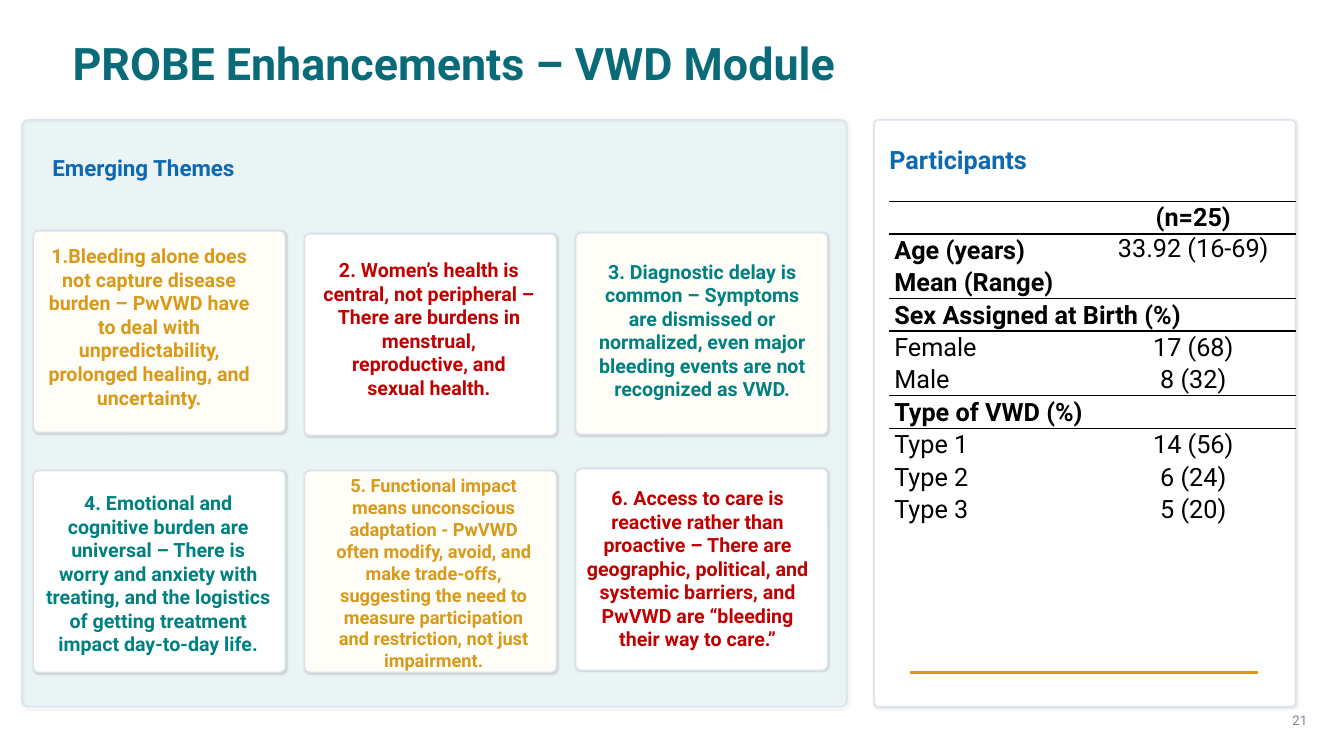
from lxml.etree import SubElement
from pptx import Presentation
from pptx.dml.color import RGBColor
from pptx.enum.shapes import MSO_CONNECTOR, MSO_SHAPE
from pptx.enum.text import MSO_ANCHOR, PP_ALIGN
from pptx.oxml.ns import qn
from pptx.util import Pt

PX = 9144
FONT = "Roboto"
PLAIN_TABLE = "{2D5ABB26-0587-4C30-8999-92F81FD0307C}"

WHITE = RGBColor(0xFF, 0xFF, 0xFF)
BLACK = RGBColor(0x00, 0x00, 0x00)
CREAM = RGBColor(0xFF, 0xFD, 0xF8)
TEAL = RGBColor(0x00, 0x80, 0x80)
DEEP_TEAL = RGBColor(0x0A, 0x6B, 0x78)
BLUE = RGBColor(0x0E, 0x69, 0xB3)
GOLD = RGBColor(0xD8, 0x9A, 0x1A)
RED = RGBColor(0xC0, 0x00, 0x00)
GREY = RGBColor(0x7A, 0x87, 0x98)
PANEL_LINE = RGBColor(0xD9, 0xE3, 0xEE)
CARD_LINE = RGBColor(0xD8, 0xE1, 0xEC)

PANEL = {"adj": 0.01, "line": PANEL_LINE, "width": 1.1,
         "alpha": 10, "blur": 1.5, "dist": 0.6}
CARD = {"adj": 0.027, "line": CARD_LINE, "width": 1,
        "alpha": 12, "blur": 1.2, "dist": 0.4}
CARD_LEFT, CARD_STEP, CARD_WIDTH, CARD_HEIGHT = 33, 269, 250, 200

THEMES = [
    (229, CREAM, GOLD, 14, (44, 315, 208, 18),
     "1.Bleeding alone does not capture disease burden – PwVWD have to deal "
     "with unpredictability, prolonged healing, and uncertainty."),
    (232, WHITE, RED, 14, (319, 290, 213, 72),
     "2. Women’s health is central, not peripheral – There are burdens in "
     "menstrual, reproductive, and sexual health."),
    (231, CREAM, TEAL, 14, (592, 290, 209, 75),
     "3. Diagnostic delay is common – Symptoms are dismissed or normalized, "
     "even major bleeding events are not recognized as VWD."),
    (467, WHITE, TEAL, 14, (44, 558, 226, 22),
     "4. Emotional and cognitive burden are universal – There is worry and "
     "anxiety with treating, and the logistics of getting treatment impact "
     "day-to-day life."),
    (467, CREAM, GOLD, 13, (325, 558, 210, 21),
     "5. Functional impact means unconscious adaptation - PwVWD often modify, "
     "avoid, and make trade-offs, suggesting the need to measure "
     "participation and restriction, not just impairment."),
    (465, WHITE, RED, 14, (579, 549, 226, 30),
     "6. Access to care is reactive rather than proactive – There are "
     "geographic, political, and systemic barriers, and PwVWD are “bleeding "
     "their way to care.”"),
]

PARTICIPANTS = [
    ("", "(n=25)"),
    ("Age (years) Mean (Range)", "33.92 (16-69)"),
    ("Sex Assigned at Birth (%)", None),
    ("Female", "17 (68)"),
    ("Male", "8 (32)"),
    ("Type of VWD (%)", None),
    ("Type 1", "14 (56)"),
    ("Type 2", "6 (24)"),
    ("Type 3", "5 (20)"),
]
BOLD_CELLS = {(0, 1), (1, 0), (2, 0), (5, 0)}
ROW_BORDERS = {0: ("a:lnT", "a:lnB"), 1: ("a:lnT", "a:lnB"), 2: ("a:lnT",),
               4: ("a:lnB",), 5: ("a:lnT",)}


def scaled(*lengths):
    """Turn px lengths into EMU."""
    return [n * PX for n in lengths]


def apply(target, formats):
    """Set every attribute named in formats on target."""
    for name, value in formats.items():
        setattr(target, name, value)


def write(p, text, size, color, bold=True, **layout):
    """Put one formatted run in a paragraph."""
    apply(p, layout)
    r = p.add_run()
    r.text = text
    apply(r.font, {"name": FONT, "size": Pt(size), "bold": bold})
    r.font.color.rgb = color


def add_text(s, box, text, size, color, bold=True, inset=0,
             anchor=MSO_ANCHOR.MIDDLE, align=PP_ALIGN.LEFT):
    """Add a wrapping text box."""
    tf = s.shapes.add_textbox(*scaled(*box)).text_frame
    apply(tf, {"word_wrap": True, "vertical_anchor": anchor,
               "margin_left": inset * PX, "margin_right": inset * PX,
               "margin_top": inset * PX // 2,
               "margin_bottom": inset * PX // 2})
    write(tf.paragraphs[0], text, size, color, bold, alignment=align)


def add_rounded(s, box, fill, look, opacity=100):
    """Add a rounded rectangle with a soft shadow."""
    sp = s.shapes.add_shape(MSO_SHAPE.ROUNDED_RECTANGLE, *scaled(*box))
    sp.adjustments[0] = look["adj"]
    sp.fill.solid()
    sp.fill.fore_color.rgb = fill
    sp.line.color.rgb = look["line"]
    sp.line.width = Pt(look["width"])
    sp.shadow.inherit = False
    spPr = sp._element.spPr
    if opacity < 100:
        tint = spPr.find(qn("a:solidFill")).find(qn("a:srgbClr"))
        SubElement(tint, qn("a:alpha"), val=str(opacity * 1000))
    shadow = SubElement(spPr.find(qn("a:effectLst")), qn("a:outerShdw"),
                        blurRad=str(Pt(look["blur"])),
                        dist=str(Pt(look["dist"])), dir="2700000",
                        algn="ctr", rotWithShape="0")
    shade = SubElement(shadow, qn("a:srgbClr"), val=str(BLACK))
    SubElement(shade, qn("a:alpha"), val=str(look["alpha"] * 1000))


def add_rule(s, x1, x2, y, color, width):
    """Add a horizontal line."""
    c = s.shapes.add_connector(MSO_CONNECTOR.STRAIGHT, *scaled(x1, y, x2, y))
    c.line.color.rgb = color
    c.line.width = Pt(width)
    SubElement(c._element.spPr, qn("a:effectLst"))


def add_border(cell, side):
    """Draw a thin black line on one side of a cell."""
    ln = SubElement(cell._tc.get_or_add_tcPr(), qn(side), w=str(Pt(1)))
    SubElement(SubElement(ln, qn("a:solidFill")), qn("a:srgbClr"),
               val=str(BLACK))


def add_participants(s):
    """Add the participant table."""
    table = s.shapes.add_table(len(PARTICIPANTS), 2,
                               *scaled(882, 200, 403, 320)).table
    apply(table, {"first_row": False, "horz_banding": False})
    table._tbl.tblPr.find(qn("a:tableStyleId")).text = PLAIN_TABLE
    for column, width in zip(table.columns, (200, 203)):
        column.width = width * PX
    for i, texts in enumerate(PARTICIPANTS):
        table.rows[i].height = (64 if i == 1 else 32) * PX
        for j, text in enumerate(texts):
            cell = table.cell(i, j)
            apply(cell, {"margin_left": 5 * PX, "margin_right": 5 * PX,
                         "margin_top": 0, "margin_bottom": 0})
            for side in ROW_BORDERS.get(i, ()):
                add_border(cell, side)
            cell.fill.background()
            if text:
                write(cell.text_frame.paragraphs[0], text, 18, BLACK,
                      (i, j) in BOLD_CELLS,
                      alignment=PP_ALIGN.CENTER if j else PP_ALIGN.LEFT,
                      line_spacing=1.0 if (i, j) == (1, 1) else 1.07)
        if texts[1] is None:
            table.cell(i, 0).merge(table.cell(i, 1))


def add_themes(s):
    """Add the grid of theme cards."""
    for i, (top, fill, color, size, box, text) in enumerate(THEMES):
        left = CARD_LEFT + i % 3 * CARD_STEP
        add_rounded(s, (left, top, CARD_WIDTH, CARD_HEIGHT), fill, CARD)
        add_text(s, box, text, size, color, align=PP_ALIGN.CENTER)


def main():
    """Build and save the slide."""
    prs = Presentation()
    apply(prs, {"slide_width": 1333 * PX, "slide_height": 750 * PX})
    s = prs.slides.add_slide(prs.slide_layouts[6])
    add_rounded(s, (867, 119, 418, 582), WHITE, PANEL)
    add_text(s, (72, 42, 880, 40), "PROBE Enhancements – VWD Module", 32,
             DEEP_TEAL)
    add_text(s, (882, 149, 230, 18), "Participants", 18, BLUE)
    add_rule(s, 903, 1248, 667, GOLD, 2)
    add_text(s, (1272, 702, 60, 33), "21", 9.5, GREY, bold=False, inset=10,
             anchor=MSO_ANCHOR.TOP)
    add_rounded(s, (22, 119, 818, 582), TEAL, PANEL, opacity=7)
    add_text(s, (52, 157, 250, 18), "Emerging Themes", 16, BLUE)
    add_themes(s)
    add_participants(s)
    prs.save("out.pptx")


if __name__ == "__main__":
    main()
